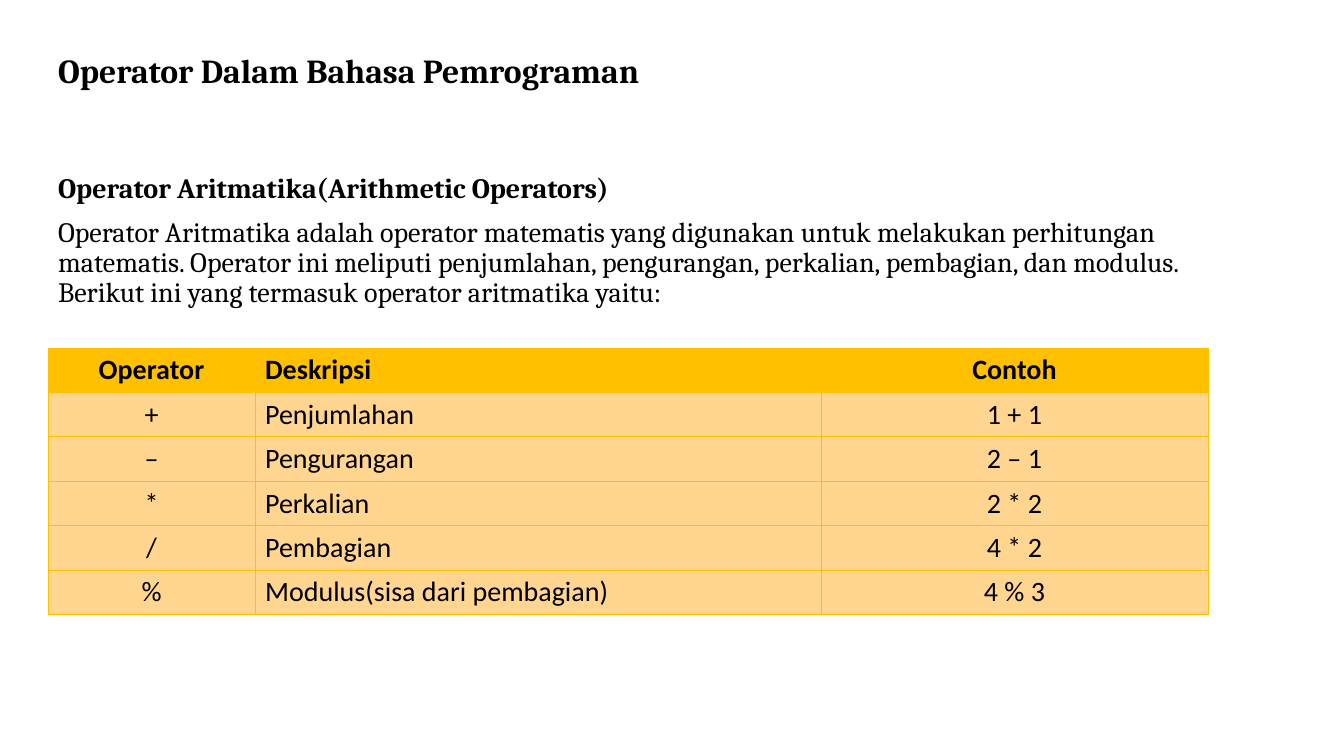
from lxml.etree import SubElement
from pptx import Presentation
from pptx.dml.color import RGBColor
from pptx.enum.text import MSO_ANCHOR, MSO_AUTO_SIZE, PP_ALIGN
from pptx.oxml import parse_xml
from pptx.oxml.ns import nsdecls, qn
from pptx.util import Pt

PX = 914400 / 100.8
COLORS = {"text": "000000", "head": "FFC000", "row": "FFD590"}
LEFT, WIDTH = 48, 1160


def emu(*lengths):
    return [round(n * PX) for n in lengths]


def style(par, face, size, bold):
    par.font.name = face
    par.font.size = Pt(size)
    par.font.bold = bold
    par.font.color.rgb = RGBColor.from_string(COLORS["text"])


deck = Presentation()
deck.slide_width, deck.slide_height = emu(1344, 756)
slide = deck.slides.add_slide(deck.slide_layouts[1])
title, body = slide.shapes.title, slide.placeholders[1]

title.text_frame.text = "Operator Dalam Bahasa Pemrograman"
body.text_frame.text = (
    "Operator Aritmatika(Arithmetic Operators)\n"
    "Operator Aritmatika adalah operator matematis yang digunakan untuk "
    "melakukan perhitungan matematis. Operator ini meliputi penjumlahan, "
    "pengurangan, perkalian, pembagian, dan modulus. "
    "Berikut ini yang termasuk operator aritmatika yaitu:"
)

for holder, top, height, anchor, size in [
    (title, 42, 62, MSO_ANCHOR.MIDDLE, 24),
    (body, 169, 146, MSO_ANCHOR.TOP, 20),
]:
    holder.left, holder.top, holder.width, holder.height = emu(LEFT, top, WIDTH, height)
    frame = holder.text_frame
    frame.word_wrap = True
    frame.auto_size = MSO_AUTO_SIZE.NONE
    frame.vertical_anchor = anchor
    for i, par in enumerate(frame.paragraphs):
        props = par._p.get_or_add_pPr()
        props.set("marL", "0")
        props.set("indent", "0")
        SubElement(props, qn("a:buNone"))
        par.alignment = PP_ALIGN.LEFT
        par.line_spacing = 0.9
        par.space_before = Pt(10 if i else 0)
        style(par, "Cambria", size, i == 0)

rows = [
    ("Operator", "Deskripsi", "Contoh"),
    ("+", "Penjumlahan", "1 + 1"),
    ("–", "Pengurangan", "2 – 1"),
    ("*", "Perkalian", "2 * 2"),
    ("/", "Pembagian", "4 * 2"),
    ("%", "Modulus(sisa dari pembagian)", "4 % 3"),
]
spans = [207, 566, 387]
table = slide.shapes.add_table(
    len(rows), len(spans), *emu(LEFT, 348, WIDTH, 44 * len(rows))
).table
for col, span in zip(table.columns, emu(*spans)):
    col.width = span

for r, row in enumerate(rows):
    for c, text in enumerate(row):
        cell = table.cell(r, c)
        cell.text = text
        cell.vertical_anchor = MSO_ANCHOR.MIDDLE
        par = cell.text_frame.paragraphs[0]
        par.alignment = PP_ALIGN.LEFT if c == 1 else PP_ALIGN.CENTER
        style(par, "Calibri", 20, r == 0)
        props = cell._tc.get_or_add_tcPr()
        for side in ("lnL", "lnR", "lnT", "lnB"):
            props.append(parse_xml(
                f'<a:{side} {nsdecls("a")} w="{Pt(0.5)}"><a:solidFill>'
                f'<a:srgbClr val="{COLORS["head"]}"/></a:solidFill></a:{side}>'
            ))
        cell.fill.solid()
        cell.fill.fore_color.rgb = RGBColor.from_string(COLORS["row" if r else "head"])

deck.save("out.pptx")
